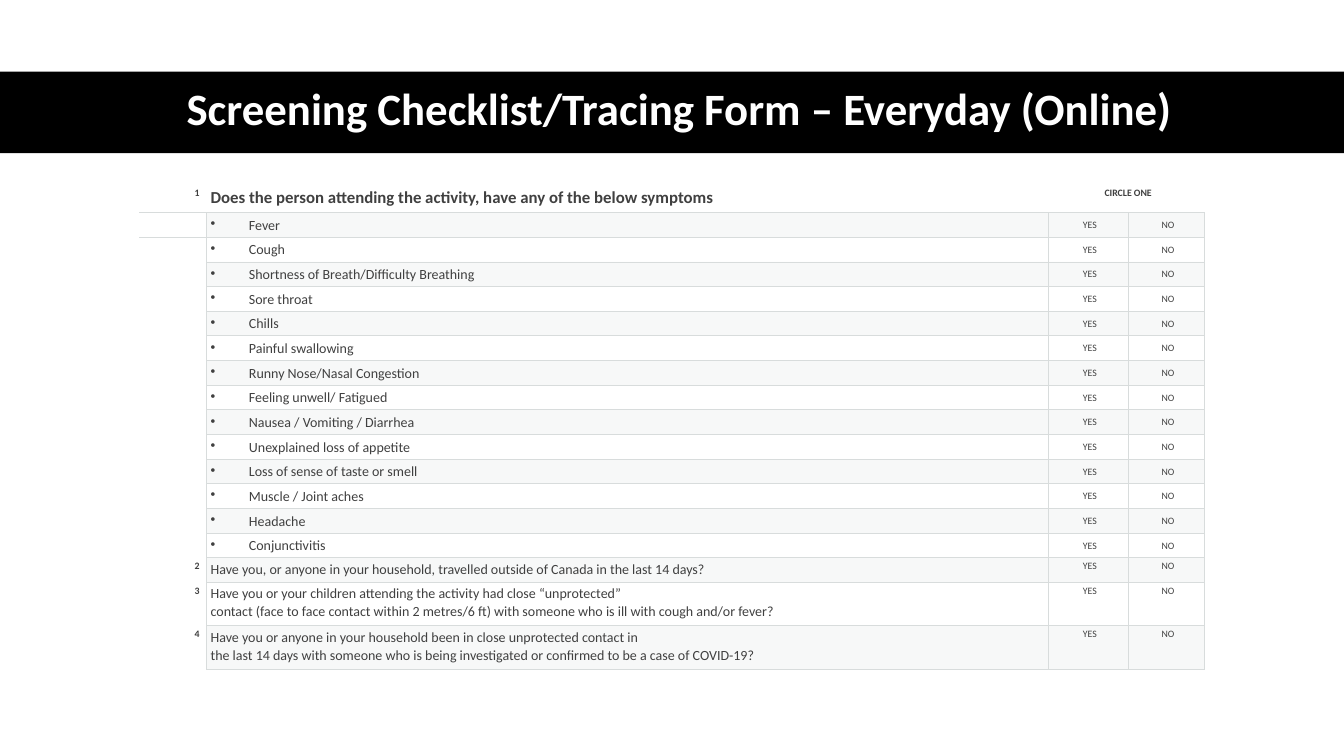
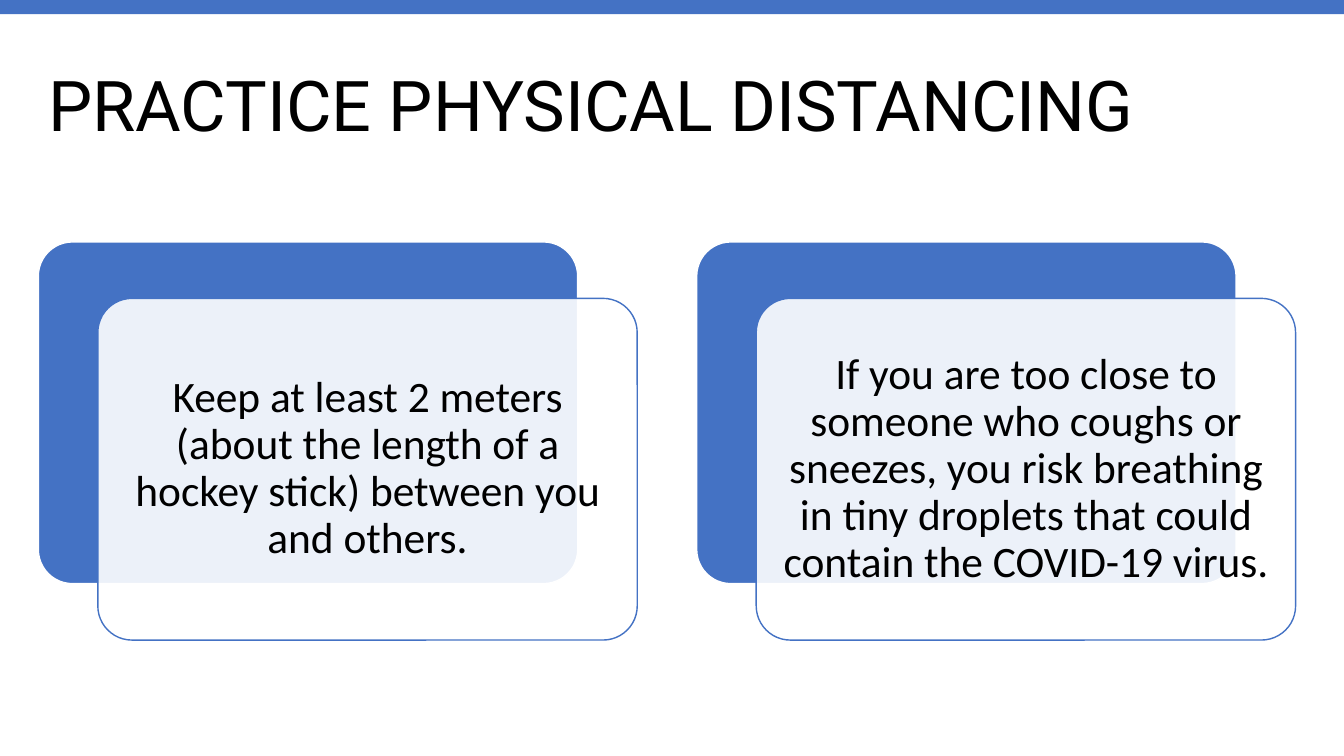
import dataclasses

import pptx
import pptx.dml.color
import pptx.enum.shapes
import pptx.enum.text
import pptx.oxml.ns
import pptx.util
from lxml import etree

Inches = pptx.util.Inches
Pt = pptx.util.Pt
qn = pptx.oxml.ns.qn
Align = pptx.enum.text.PP_ALIGN
Anchor = pptx.enum.text.MSO_ANCHOR
Kind = pptx.enum.shapes.MSO_SHAPE


@dataclasses.dataclass(frozen=True)
class Theme:
    black: str = "000000"
    white: str = "FFFFFF"
    blue: str = "4472C4"
    ink: str = "404040"
    rule: str = "D8DCDC"
    tint: str = "D8DEDC"
    body: str = "Calibri"
    head: str = "Roboto"
    tiny: int = 7
    small: int = 10
    lead: int = 12
    card: int = 31
    form: int = 32
    title: int = 50


T = Theme()
WIDE = 13.33

FORM = "Screening Checklist/Tracing Form – Everyday (Online)"
ASK = "Does the person attending the activity, have any of the below symptoms"
CIRCLE = "CIRCLE ONE"
SIGNS = [
    "Fever",
    "Cough",
    "Shortness of Breath/Difficulty Breathing",
    "Sore throat",
    "Chills",
    "Painful swallowing",
    "Runny Nose/Nasal Congestion",
    "Feeling unwell/ Fatigued",
    "Nausea / Vomiting / Diarrhea",
    "Unexplained loss of appetite",
    "Loss of sense of taste or smell",
    "Muscle / Joint aches",
    "Headache",
    "Conjunctivitis",
]
ITEMS = [
    "Have you, or anyone in your household, travelled outside of Canada in the last 14 days?",
    "Have you or your children attending the activity had close “unprotected”\n"
    "contact (face to face contact within 2 metres/6 ft) with someone who is ill with cough and/or fever?",
    "Have you or anyone in your household been in close unprotected contact in\n"
    "the last 14 days with someone who is being investigated or confirmed to be a case of COVID-19?",
]
COLS = [0.67, 8.35, 0.79, 0.76]
TALL = 4.81
TOP_ROW = 0.28
TWO_LINE = 0.43

SPACE = "PRACTICE PHYSICAL DISTANCING"
CARDS = [
    "Keep at least 2 meters (about the length of a hockey stick) between you and others.",
    "If you are too close to someone who coughs or sneezes, you risk breathing "
    "in tiny droplets that could contain the COVID-19 virus.",
]


def rgb(code):
    return pptx.dml.color.RGBColor.from_string(code)


def paint(fill, code, solid=100):
    fill.solid()
    fill.fore_color.rgb = rgb(code)
    if solid < 100:
        node = fill._xPr.find(qn("a:solidFill")).find(qn("a:srgbClr"))
        etree.SubElement(node, qn("a:alpha"), val=str(solid * 1000))


def write(frame, text, size=T.small, font=T.body, color=T.ink, bold=False,
          align=Align.LEFT, lead=0.9, bullet=False):
    for i, line in enumerate(text.split("\n")):
        par = frame.add_paragraph() if i else frame.paragraphs[0]
        par.alignment = align
        par.line_spacing = lead
        if bullet:
            prop = par._p.get_or_add_pPr()
            prop.set("marL", str(Inches(0.38)))
            prop.set("indent", str(-Inches(0.38)))
            etree.SubElement(prop, qn("a:buChar"), char="•")
        if not line:
            etree.SubElement(par._p, qn("a:endParaRPr"), sz=str(size * 100))
            continue
        run = par.add_run()
        run.text = line
        run.font.size = Pt(size)
        run.font.name = font
        run.font.bold = bold
        run.font.color.rgb = rgb(color)


def block(slide, kind, box, color, line=None, solid=100):
    shape = slide.shapes.add_shape(kind, *map(Inches, box))
    shape.shadow.inherit = False
    paint(shape.fill, color, solid)
    if line:
        shape.line.color.rgb = rgb(line)
        shape.line.width = Pt(1)
    else:
        shape.line.fill.background()
    return shape


def start(deck, text, box, band, shade, **look):
    slide = deck.slides.add_slide(deck.slide_layouts[5])
    bar = block(slide, Kind.RECTANGLE, band, shade)
    slide.shapes._spTree.insert(2, bar._element)
    title = slide.shapes.title
    title.left, title.top, title.width, title.height = map(Inches, box)
    frame = title.text_frame
    frame.auto_size = pptx.enum.text.MSO_AUTO_SIZE.NONE
    frame.word_wrap = True
    frame.vertical_anchor = Anchor.MIDDLE
    write(frame, text, **look)
    return slide


def edge(cell, sides):
    prop = cell._tc.get_or_add_tcPr()
    for i, side in enumerate(sides):
        line = etree.Element(qn("a:ln" + side), w=str(Pt(0.75)))
        fill = etree.SubElement(line, qn("a:solidFill"))
        etree.SubElement(fill, qn("a:srgbClr"), val=T.rule)
        prop.insert(i, line)


def form(deck):
    slide = start(deck, FORM, (0.61, 0.7, 12.26, 0.81), (0, 0.71, WIDE, 0.81),
                  T.black, size=T.form, color=T.white, bold=True,
                  align=Align.CENTER)
    rows = [("1", ASK, CIRCLE, "")]
    rows += [("", sign, "YES", "NO") for sign in SIGNS]
    rows += [(str(n), item, "YES", "NO") for n, item in enumerate(ITEMS, 2)]
    pairs = sum("\n" in row[1] for row in rows)
    step = (TALL - TOP_ROW - pairs * TWO_LINE) / (len(rows) - 1 - pairs)
    box = (1.38, 1.83, sum(COLS), TALL)
    table = slide.shapes.add_table(len(rows), len(COLS), *map(Inches, box)).table
    table._tbl.tblPr.find(qn("a:tableStyleId")).text = "{2D5ABB26-0587-4C30-8999-92F81FD0307C}"
    table.first_row = table.horz_banding = False
    for col, width in zip(table.columns, COLS):
        col.width = Inches(width)
    table.cell(0, 2).merge(table.cell(0, 3))
    for r, row in enumerate(rows):
        high = TOP_ROW if r == 0 else TWO_LINE if "\n" in row[1] else step
        table.rows[r].height = Inches(high)
        sign = row[1] in SIGNS
        for c, text in enumerate(row):
            cell = table.cell(r, c)
            cell.margin_left = Inches(0.04)
            cell.margin_right = Inches(0.01 if c else 0.07)
            cell.margin_top = cell.margin_bottom = Inches(0.02)
            cell.vertical_anchor = Anchor.MIDDLE if sign else Anchor.TOP
            size = T.tiny if c != 1 else T.small if r else T.lead
            align = (Align.RIGHT, Align.LEFT, Align.CENTER, Align.CENTER)[c]
            write(cell.text_frame, text, size=size, align=align, lead=1.07,
                  bold=r == 0 or c == 0, bullet=sign and c == 1)
            if c and r % 2:
                paint(cell.fill, T.tint, 20)
            else:
                cell.fill.background()
            edge(cell, "B" if r == 0 else "LRTB" if c else "RT" if r == 1 else "R")


def space(deck):
    slide = start(deck, SPACE, (0.38, 0.35, 12.48, 1.45), (0, 0, WIDE, 0.14),
                  T.blue, size=T.title, font=T.head, color=T.black)
    wide, high = 5.35, 3.39
    for i, text in enumerate(CARDS):
        left = 0.38 + i * 6.53
        back = block(slide, Kind.ROUNDED_RECTANGLE, (left, 2.4, wide, high),
                     T.blue, T.white)
        card = block(slide, Kind.ROUNDED_RECTANGLE, (left + 0.59, 2.96, wide, high),
                     T.white, T.blue, 90)
        back.adjustments[0] = card.adjustments[0] = 0.1
        frame = card.text_frame
        frame.word_wrap = True
        frame.vertical_anchor = Anchor.MIDDLE
        frame.margin_left = frame.margin_right = Inches(0.13)
        frame.margin_top = frame.margin_bottom = Inches(0.13)
        write(frame, text, size=T.card, color=T.black, align=Align.CENTER)


def main():
    deck = pptx.Presentation()
    deck.slide_width = Inches(WIDE)
    deck.slide_height = Inches(7.5)
    form(deck)
    space(deck)
    deck.save("out.pptx")


if __name__ == "__main__":
    main()
